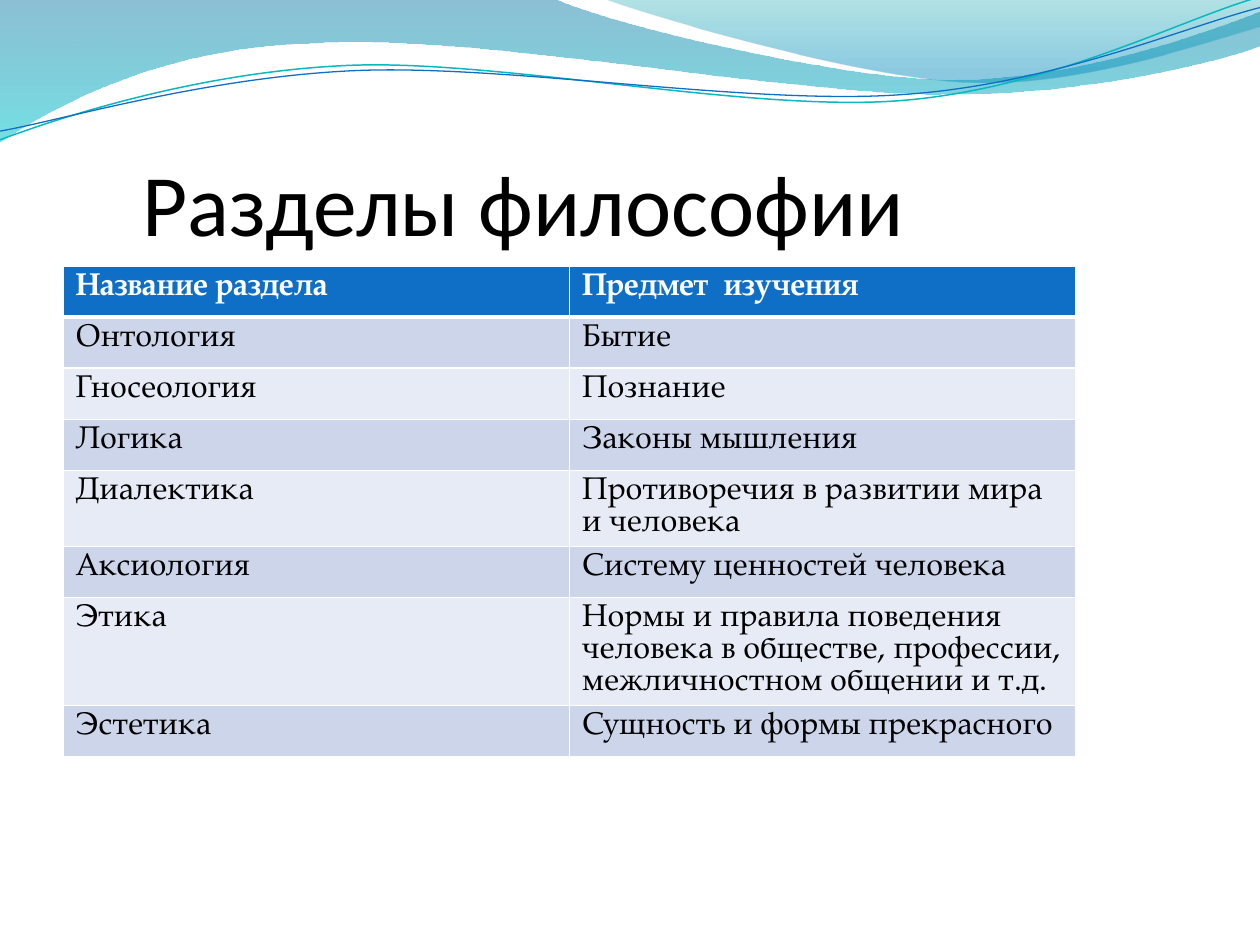
from dataclasses import dataclass
from typing import Optional

from lxml.etree import SubElement
from pptx import Presentation
from pptx.dml.color import RGBColor
from pptx.enum.text import MSO_ANCHOR
from pptx.oxml.ns import qn
from pptx.util import Pt

WHITE = RGBColor(0xFF, 0xFF, 0xFF)
BLACK = RGBColor(0, 0, 0)
BLUE = RGBColor(0x0F, 0x6F, 0xC6)
TEAL = RGBColor(0x0A, 0xB8, 0xBF)
DEEP_BLUE = RGBColor(0x00, 0x74, 0xA1)
TURQUOISE = RGBColor(0x00, 0xC6, 0xCF)
SEA_GREEN = RGBColor(0x00, 0xA1, 0xA9)
SKY_BLUE = RGBColor(0x00, 0x8B, 0xBF)
BANDS = (RGBColor(0xE7, 0xEB, 0xF5), RGBColor(0xCC, 0xD5, 0xEA))

UNITS_PER_POINT = 100
ROW_HEIGHT = Pt(29.2)
COLUMN_WIDTH = Pt(289.5)

Point = tuple[float, float]


@dataclass(frozen=True)
class GradientStop:
    position: float
    color: RGBColor
    opacity: int


@dataclass(frozen=True)
class Wave:
    """Segments hold one point for a straight line, three for a Bezier curve."""
    start: Point
    segments: tuple[tuple[Point, ...], ...]
    gradient: tuple[GradientStop, ...] = ()
    line_color: Optional[RGBColor] = None
    line_width: float = 0


WAVES = (
    Wave((0, 0), (
        ((316.8, -0.7),),
        ((342.7, 12.2), (478.1, 45.4), (545.8, 45.4)),
        ((614.2, 45.4), (689.8, 18.7), (720, 6.5)),
        ((720.7, 25.9),),
        ((707.8, 31.7), (626.4, 54.7), (537.1, 54)),
        ((447.8, 54), (275, 20.2), (185, 24.5)),
        ((92.9, 25.9), (33.1, 59.8), (-0.7, 81.4)),
        ((0, 0),),
    ), (GradientStop(0, DEEP_BLUE, 45), GradientStop(1, TURQUOISE, 55))),
    Wave((344.9, -0.7), (
        ((366.5, 7.9), (491, 44.6), (553.7, 46.8)),
        ((616.3, 49.7), (691.9, 23), (720, 15.1)),
        ((720, 0),),
        ((344.9, -0.7),),
    ), (GradientStop(0, SEA_GREEN, 30), GradientStop(0.8, SKY_BLUE, 45))),
    Wave((0, 79.9), (
        ((34.6, 67), (113.8, 41), (199.4, 37.4)),
        ((284.4, 33.8), (427, 64.1), (513.4, 57.6)),
        ((599.8, 51.1), (675.4, 10.8), (718.6, -1.4)),
    ), line_color=TEAL, line_width=0.85),
    Wave((0, 74.9), (
        ((33.8, 69.1), (118.1, 43.9), (203.8, 40.3)),
        ((290.2, 36.7), (429.8, 60.5), (516.2, 54)),
        ((601.9, 48.2), (677.5, 15.1), (720, 4.3)),
    ), line_color=BLUE, line_width=0.75),
)

ROWS = (
    ("Название раздела", "Предмет  изучения"),
    ("Онтология", "Бытие"),
    ("Гносеология", "Познание"),
    ("Логика", "Законы мышления"),
    ("Диалектика", "Противоречия в развитии мира и человека"),
    ("Аксиология", "Систему ценностей человека"),
    ("Этика", "Нормы и правила поведения человека в обществе, "
              "профессии, межличностном общении и т.д."),
    ("Эстетика", "Сущность и формы прекрасного"),
)

TITLE_FORMAT = {"name": "Calibri", "size": Pt(50), "bold": False}
CELL_FORMAT = {"name": "TeX Gyre Pagella", "size": Pt(18)}


def apply_format(target, values: dict) -> None:
    for name, value in values.items():
        setattr(target, name, value)


def bend_segments(shape, segments: tuple[tuple[Point, ...], ...]) -> None:
    """Turn each run of three straight steps that stands for a curve into a Bezier."""
    steps = iter(list(shape._element.iter(qn("a:lnTo"))))
    for segment in segments:
        parts = [next(steps) for _ in segment]
        if len(parts) == 3:
            first, *others = parts
            first.tag = qn("a:cubicBezTo")
            for part in others:
                first.append(part[0])
                part.getparent().remove(part)


def draw_wave(slide, wave: Wave) -> None:
    points = [wave.start] + [point for segment in wave.segments for point in segment]
    start, *others = [(x * UNITS_PER_POINT, y * UNITS_PER_POINT) for x, y in points]
    builder = slide.shapes.build_freeform(*start, scale=Pt(1) / UNITS_PER_POINT)
    builder.add_line_segments(others, close=bool(wave.gradient))
    shape = builder.convert_to_shape()
    bend_segments(shape, wave.segments)
    shape.shadow.inherit = False
    if not wave.gradient:
        shape.fill.background()
        shape.line.color.rgb = wave.line_color
        shape.line.width = Pt(wave.line_width)
        return
    shape.line.fill.background()
    shape.fill.gradient()
    shape.fill.gradient_angle = 270
    for stop, value in zip(shape.fill.gradient_stops, wave.gradient):
        stop.position = value.position
        stop.color.rgb = value.color
    colors = list(shape._element.spPr.iter(qn("a:srgbClr")))
    for color, value in zip(colors, wave.gradient):
        SubElement(color, qn("a:alpha"), val=str(value.opacity * 1000))


def draw_title(slide) -> None:
    frame = slide.shapes.add_textbox(Pt(36), Pt(55), Pt(648), Pt(90)).text_frame
    apply_format(frame, {
        "word_wrap": True, "vertical_anchor": MSO_ANCHOR.BOTTOM,
        "margin_left": Pt(45.5), "margin_right": 0, "margin_top": Pt(3.6), "margin_bottom": 0,
    })
    run = frame.paragraphs[0].add_run()
    run.text = "Разделы философии"
    apply_format(run.font, TITLE_FORMAT)
    run.font.color.rgb = BLACK


def add_borders(cell, widths: dict[str, float]) -> None:
    properties = cell._tc.get_or_add_tcPr()
    for side, width in widths.items():
        border = SubElement(properties, qn(f"a:ln{side}"), w=str(Pt(width)))
        fill = SubElement(border, qn("a:solidFill"))
        SubElement(fill, qn("a:srgbClr"), val=str(WHITE))


def draw_table(slide) -> None:
    table = slide.shapes.add_table(len(ROWS), 2, Pt(36), Pt(152),
                                   2 * COLUMN_WIDTH, len(ROWS) * ROW_HEIGHT).table
    for column in table.columns:
        column.width = COLUMN_WIDTH
    for row_index, texts in enumerate(ROWS):
        is_header = row_index == 0
        table.rows[row_index].height = ROW_HEIGHT
        for column_index, text in enumerate(texts):
            cell = table.cell(row_index, column_index)
            add_borders(cell, {"L": 1, "R": 1, "T": 3 if row_index == 1 else 1,
                               "B": 3 if is_header else 1})
            cell.fill.solid()
            cell.fill.fore_color.rgb = BLUE if is_header else BANDS[row_index % 2]
            paragraph = cell.text_frame.paragraphs[0]
            paragraph.line_spacing = Pt(18.1)
            run = paragraph.add_run()
            run.text = text
            apply_format(run.font, CELL_FORMAT | {"bold": is_header})
            run.font.color.rgb = WHITE if is_header else BLACK


def main() -> None:
    presentation = Presentation()
    presentation.slide_width, presentation.slide_height = Pt(720), Pt(540)
    slide = presentation.slides.add_slide(presentation.slide_layouts[6])
    for wave in WAVES:
        draw_wave(slide, wave)
    draw_title(slide)
    draw_table(slide)
    presentation.save("out.pptx")


if __name__ == "__main__":
    main()
